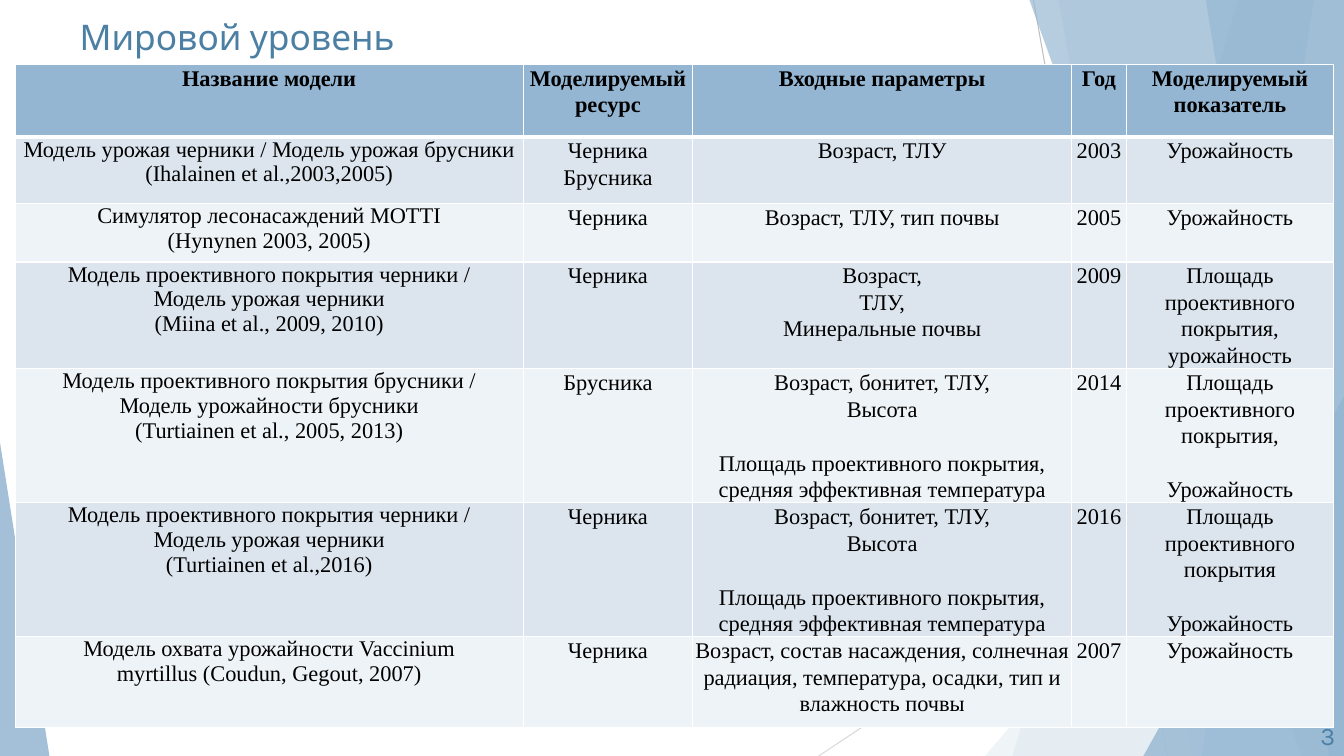
from lxml import etree
from pptx import Presentation
from pptx.dml.color import RGBColor
from pptx.enum.shapes import MSO_CONNECTOR, MSO_SHAPE
from pptx.enum.text import MSO_ANCHOR, PP_ALIGN
from pptx.oxml.ns import qn
from pptx.util import Inches, Pt

STRAIGHT = MSO_CONNECTOR.STRAIGHT
TRIANGLE = MSO_SHAPE.ISOSCELES_TRIANGLE
MIDDLE = MSO_ANCHOR.MIDDLE
LEFT, CENTER, RIGHT = PP_ALIGN.LEFT, PP_ALIGN.CENTER, PP_ALIGN.RIGHT

W, H = 13.33, 7.5
SANS, SERIF = "Karla", "Times New Roman"
TITLE_COLOR, WHITE, BLUE = "4B7FA4", "FFFFFF", "94B6D2"
BANDS = ("DCE5EE", "EEF3F7")
LINE_GAP = 19.7

TITLE = "Мировой уровень"
PAGE = "3"
HEADER = ["Название модели", "Моделируемый ресурс", "Входные параметры", "Год",
          "Моделируемый показатель"]
SITE = ("Возраст, бонитет, ТЛУ,\nВысота\n\n"
        "Площадь проективного покрытия, средняя эффективная температура")
MODELS = [
    ["Модель урожая черники / Модель урожая брусники\n(Ihalainen et al.,2003,2005)",
     "Черника\nБрусника", "Возраст, ТЛУ", "2003", "Урожайность"],
    ["Симулятор лесонасаждений MOTTI\n(Hynynen 2003, 2005)",
     "Черника", "Возраст, ТЛУ, тип почвы", "2005", "Урожайность"],
    ["Модель проективного покрытия черники /\nМодель урожая черники\n"
     "(Miina et al., 2009, 2010)",
     "Черника", "Возраст,\nТЛУ,\nМинеральные почвы", "2009",
     "Площадь проективного покрытия,\nурожайность"],
    ["Модель проективного покрытия брусники /\nМодель урожайности брусники\n"
     "(Turtiainen et al., 2005, 2013)",
     "Брусника", SITE, "2014", "Площадь проективного покрытия,\n\nУрожайность"],
    ["Модель проективного покрытия черники /\nМодель урожая черники\n"
     "(Turtiainen et al.,2016)",
     "Черника", SITE, "2016", "Площадь проективного покрытия\n\nУрожайность"],
    ["Модель охвата урожайности Vaccinium\nmyrtillus (Coudun, Gegout, 2007)",
     "Черника",
     "Возраст, состав насаждения, солнечная радиация, температура, осадки, "
     "тип и влажность почвы", "2007", "Урожайность"],
]
COLS = [5.04, 1.68, 3.76, 0.54, 2.06]
ROWS = [0.72, 0.66, 0.58, 1.06, 1.32, 1.32, 0.9]

RAYS = [(10.25, 0, 11.58, H, "BFBFBF"), (W, 4.03, 8.12, H, "D9D9D9")]
FACETS = [
    ("band", (12.28, 10.04), BLUE, 30),
    ("band", (10.5, 11.82), BLUE, 20),
    ("peak", (9.77, 3.33, 3.56, 1), "E9F0F5", 72),
    ("band", (10.21, 12.91), "97B8D0", 70),
    ("band", (13.03, 11.92), "BFD3E4", 70),
    ("band", (11.96, 13.18), BLUE, 65),
    ("peak", (11.34, 3.93, 1.99, 1), BLUE, 80),
    ("peak", (0, 4.39, 0.49, 0), BLUE, 85),
]


def rgb(value):
    return RGBColor.from_string(value)


def put_text(tf, text, size, font, color, align=LEFT, bold=False, spacing=None):
    tf.word_wrap = True
    p, gap = tf.paragraphs[0], 0
    for i, line in enumerate(text.split("\n")):
        if not line:
            gap = LINE_GAP
            continue
        if i:
            p = tf.add_paragraph()
        p.alignment, p.line_spacing = align, spacing
        p.space_before, gap = Pt(gap), 0
        r = p.add_run()
        r.text = line
        r.font.size, r.font.name, r.font.bold = Pt(size), font, bold
        r.font.color.rgb = rgb(color)


def add_ray(x1, y1, x2, y2, color):
    c = s.shapes.add_connector(STRAIGHT, *map(Inches, (x1, y1, x2, y2)))
    c.line.color.rgb = rgb(color)
    c.line.width = Pt(0.75)
    etree.SubElement(c._element.spPr, qn("a:effectLst"))


def add_facet(kind, geometry, color, alpha):
    if kind == "band":
        top, bottom = geometry
        fb = s.shapes.build_freeform(Inches(top), 0)
        fb.add_line_segments([(Inches(x), Inches(y)) for x, y in
                              ((W, 0), (W, H), (bottom, H))])
        sp = fb.convert_to_shape()
    else:
        x, y, width, apex = geometry
        sp = s.shapes.add_shape(TRIANGLE, *map(Inches, (x, y, width, H - y)))
        sp.adjustments[0] = apex
    sp.shadow.inherit = False
    sp.line.fill.background()
    sp.fill.solid()
    sp.fill.fore_color.rgb = rgb(color)
    clr = sp._element.spPr.find(qn("a:solidFill"))[0]
    etree.SubElement(clr, qn("a:alpha"), val=str(alpha * 1000))


def set_borders(cell, top, bottom):
    tcPr = cell._tc.get_or_add_tcPr()
    for i, (side, width) in enumerate((("L", 1), ("R", 1), ("T", top), ("B", bottom))):
        ln = etree.Element(qn("a:ln" + side), w=str(Pt(width)))
        fill = etree.SubElement(ln, qn("a:solidFill"))
        etree.SubElement(fill, qn("a:srgbClr"), val=WHITE)
        tcPr.insert(i, ln)


def add_models():
    tbl = s.shapes.add_table(len(ROWS), len(COLS), Inches(0.15), Inches(0.64),
                             Inches(sum(COLS)), Inches(sum(ROWS))).table
    for col, width in zip(tbl.columns, COLS):
        col.width = Inches(width)
    for i, (row, height, texts) in enumerate(zip(tbl.rows, ROWS, [HEADER] + MODELS)):
        row.height = Inches(height)
        for j, (cell, text) in enumerate(zip(row.cells, texts)):
            cell.margin_left = cell.margin_right = Inches(0.02)
            cell.margin_top = cell.margin_bottom = 0
            cell.fill.solid()
            cell.fill.fore_color.rgb = rgb(BANDS[(i - 1) % 2] if i else BLUE)
            set_borders(cell, 3 if i == 1 else 1, 1 if i else 3)
            put_text(cell.text_frame, text, 16, SERIF, "000000", CENTER,
                     bold=i == 0, spacing=1.0 if i and j == 0 else 1.07)


prs = Presentation()
prs.slide_width, prs.slide_height = Inches(W), Inches(H)
s = prs.slides.add_slide(prs.slide_layouts[5])
s.background.fill.solid()
s.background.fill.fore_color.rgb = rgb(WHITE)

for ray in RAYS:
    add_ray(*ray)
for facet in FACETS:
    add_facet(*facet)

title = s.shapes.title
title.left, title.top, title.width, title.height = map(Inches, (0.69, 0.08, 4.85, 0.56))
title.text_frame.vertical_anchor = MIDDLE
put_text(title.text_frame, TITLE, 25.2, SANS, TITLE_COLOR)

add_models()

page = s.shapes.add_textbox(*map(Inches, (12.59, 7.1, 0.75, 0.4)))
page.text_frame.vertical_anchor = MIDDLE
put_text(page.text_frame, PAGE, 18, SANS, TITLE_COLOR, RIGHT)

prs.save("out.pptx")
